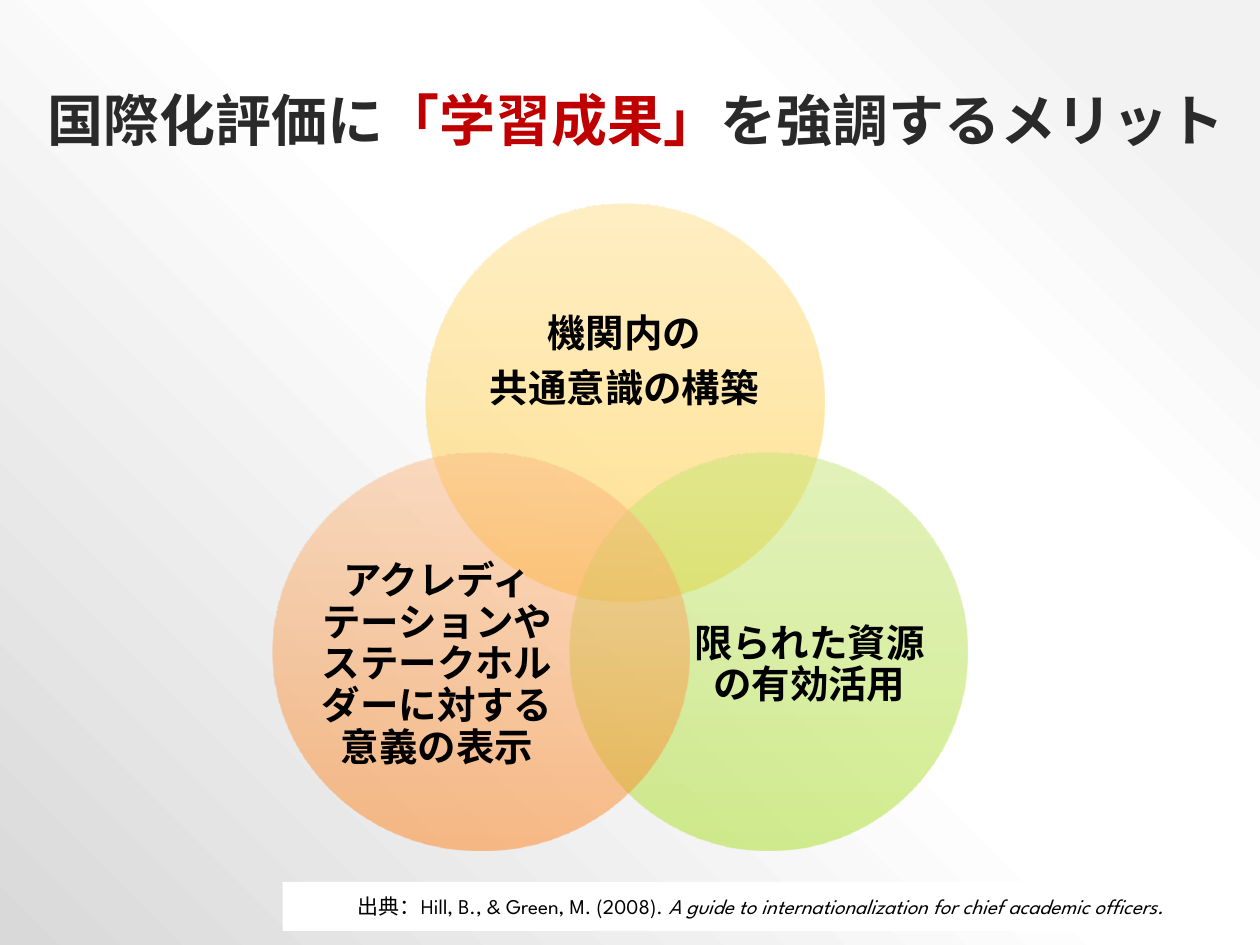
import pptx
import pptx.dml.color
import pptx.enum.shapes
import pptx.enum.text
import pptx.oxml
import pptx.oxml.ns
import pptx.util
from pptx.util import Pt

CJK_FONT = "Noto Sans CJK JP"
LATIN_FONT = "League Spartan"
ANCHOR = pptx.enum.text.MSO_ANCHOR
CENTER = pptx.enum.text.PP_ALIGN.CENTER

# Box (left, top, width, height), gradient colours, label box, label paragraphs
CIRCLES = [
    ((243.5, 116.5, 227.5, 227.5), ("FFE08A", "FFD358", "FFC520"),
     (273.5, 156, 166.5, 102.5), ["機関内の", "共通意識の構築"]),
    ((325.5, 258.5, 227.5, 227.5), ("C7E676", "B8E14F", "A9DF21"),
     (394.5, 317.5, 136, 125.5), ["限られた資源の有効活用"]),
    ((156, 258.5, 238, 227.5), ("FCBC87", "FCA155", "FF831C"),
     (178.5, 317.5, 142.5, 125.5),
     ["アクレディテーションやステークホルダーに対する意義の表示"]),
]


def color(value):
    return pptx.dml.color.RGBColor.from_string(value)


def set_gradient(properties, stops, direction, alpha=100):
    """Replace the solid fill in the properties element with a gradient."""
    stop_xml = "".join(
        f'<a:gs pos="{position * 1000}"><a:srgbClr val="{value}">'
        f'<a:alpha val="{alpha * 1000}"/></a:srgbClr></a:gs>'
        for position, value in stops)
    gradient = pptx.oxml.parse_xml(
        f'<a:gradFill {pptx.oxml.ns.nsdecls("a")} rotWithShape="1">'
        f'<a:gsLst>{stop_xml}</a:gsLst>{direction}</a:gradFill>')
    solid = properties.find(pptx.oxml.ns.qn("a:solidFill"))
    properties.replace(solid, gradient)


def add_filled_shape(slide, kind, box, fill):
    shape = slide.shapes.add_shape(kind, *map(Pt, box))
    shape.shadow.inherit = False
    shape.fill.solid()
    shape.fill.fore_color.rgb = color(fill)
    shape.line.fill.background()
    return shape


def add_text_box(slide, box, anchor):
    frame = slide.shapes.add_textbox(*map(Pt, box)).text_frame
    frame.word_wrap = True
    frame.vertical_anchor = anchor
    return frame


def set_font(font, name, size, value, bold=False):
    font.name = name
    font.size = Pt(size)
    font.bold = bold
    font.color.rgb = color(value)


def add_run(paragraph, text):
    run = paragraph.add_run()
    run.text = text
    return run


def add_background(slide):
    slide.background.fill.solid()
    properties = slide.element.find(".//" + pptx.oxml.ns.qn("p:bgPr"))
    set_gradient(
        properties,
        [(10, "F2F2F2"), (28, "FFFFFF"), (48, "FFFFFF"), (100, "D9D9D9")],
        '<a:path path="circle"><a:fillToRect l="100000" b="100000"/></a:path>')


def add_title(slide, box):
    paragraph = add_text_box(slide, box, ANCHOR.BOTTOM).paragraphs[0]
    paragraph.line_spacing = 0.9
    set_font(paragraph.font, CJK_FONT, 32, "2A2A2A", bold=True)
    add_run(paragraph, "国際化評価に")
    add_run(paragraph, "「学習成果」").font.color.rgb = color("C00000")
    add_run(paragraph, "を強調するメリット")


def add_circle(slide, box, colors, label_box, lines):
    # Translucent disc
    circle = add_filled_shape(
        slide, pptx.enum.shapes.MSO_SHAPE.OVAL, box, colors[0])
    set_gradient(circle.element.spPr, list(zip((0, 50, 100), colors)),
                 '<a:lin ang="5400000" scaled="0"/>', alpha=50)

    # Label
    frame = add_text_box(slide, label_box, ANCHOR.MIDDLE)
    frame.margin_left = frame.margin_right = 0
    frame.margin_top = frame.margin_bottom = 0
    frame.text = "\n".join(lines)
    for paragraph in frame.paragraphs:
        paragraph.alignment = CENTER
        paragraph.line_spacing = 0.9
        paragraph.space_after = Pt(8)
        set_font(paragraph.font, CJK_FONT, 22, "000000", bold=True)


def add_citation(slide, box):
    shape = add_filled_shape(
        slide, pptx.enum.shapes.MSO_SHAPE.RECTANGLE, box, "FFFFFF")
    frame = shape.text_frame
    frame.word_wrap = True
    frame.vertical_anchor = ANCHOR.MIDDLE
    paragraph = frame.paragraphs[0]
    paragraph.alignment = CENTER
    set_font(paragraph.font, LATIN_FONT, 12, "000000")
    add_run(paragraph, "出典：Hill, B., & Green, M. (2008). ")
    title = "A guide to internationalization for chief academic officers. "
    add_run(paragraph, title).font.italic = True


def main():
    presentation = pptx.Presentation()
    presentation.slide_width = Pt(720)
    presentation.slide_height = Pt(540)
    slide = presentation.slides.add_slide(presentation.slide_layouts[6])

    add_background(slide)
    add_title(slide, (20, 26, 692, 65.5))
    for circle in CIRCLES:
        add_circle(slide, *circle)
    add_citation(slide, (161.5, 504, 550, 28))

    presentation.save("out.pptx")


if __name__ == "__main__":
    main()
